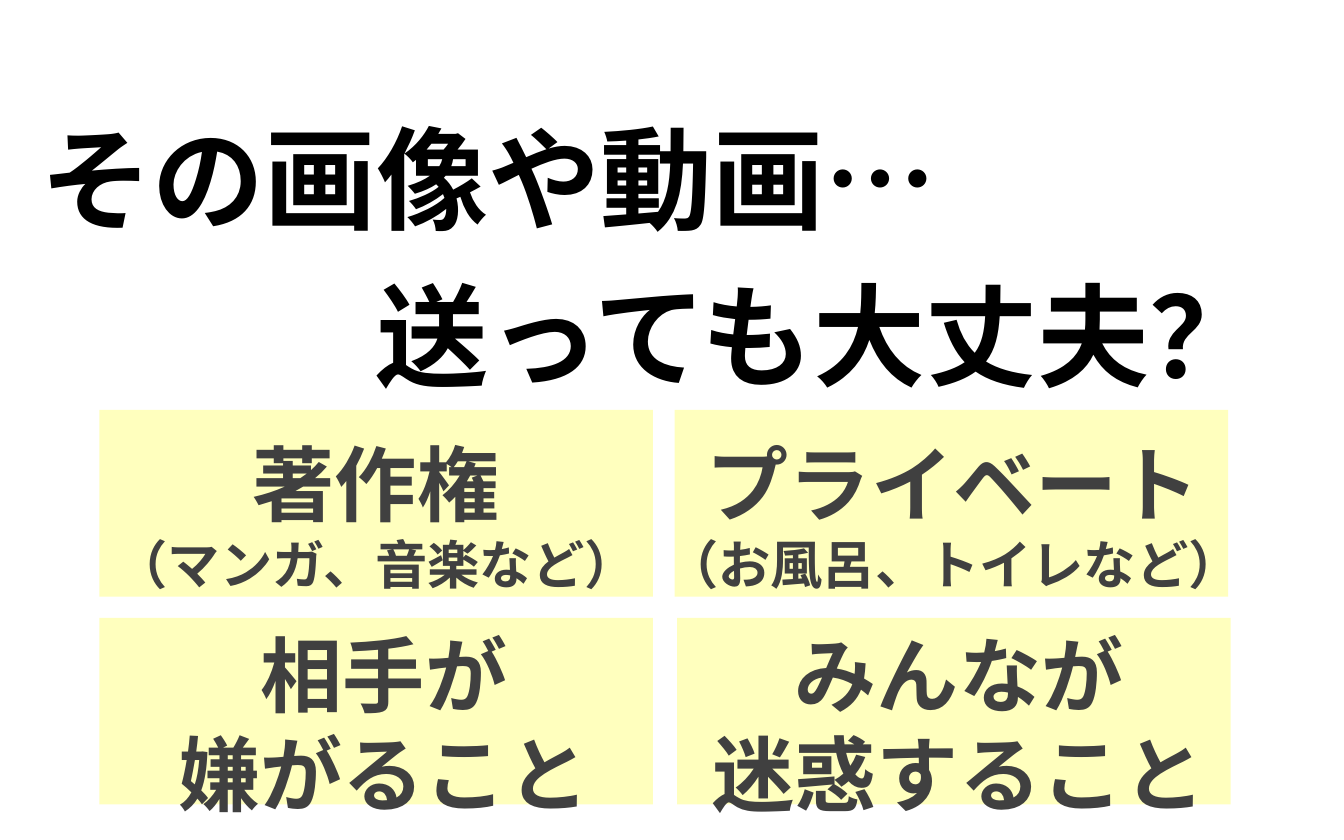
from pptx import Presentation
from pptx.dml.color import RGBColor
from pptx.enum import shapes, text
from pptx.oxml.ns import qn
from pptx.util import Cm, Pt
from lxml import etree

FONT = "Noto Sans CJK JP"
COLORS = {"title": "000000", "card": "FFFFBE", "card_text": "404040"}
TITLE_LINES = ["その画像や動画…", "送っても大丈夫？"]
TITLE_SIZE = 60
TITLE_LEADING = 84
CARD_LEADING = 1.21

# Card left and top, label left, top and width (cm), then lines with their sizes
CARD_WIDTH, CARD_HEIGHT = 10.46, 3.53
CARDS = [
    ((1.88, 7.75), (1.88, 8.05, 10.46), [("著作権", 44), ("（マンガ、音楽など）", 28)]),
    ((12.75, 7.75), (12.32, 8.05, 11.4), [("プライベート", 44), ("（お風呂、トイレなど）", 28)]),
    ((1.88, 11.68), (2.03, 11.66, 10.46), [("相手が", 44), ("嫌がること", 44)]),
    ((12.8, 11.68), (12.9, 11.66, 10.46), [("みんなが", 44), ("迷惑すること", 44)]),
]


def write_lines(frame, lines, color, alignment, leading):
    """Write (text, size) lines; leading is a multiple of the size, set exactly."""
    frame.word_wrap = True
    frame.auto_size = text.MSO_AUTO_SIZE.NONE
    frame.vertical_anchor = text.MSO_ANCHOR.TOP
    frame.text = "\n".join(line for line, _ in lines)
    for paragraph, (_, size) in zip(frame.paragraphs, lines):
        paragraph.alignment = alignment
        paragraph.line_spacing = Pt(round(size * leading, 1))
        paragraph.space_before = Pt(0)
        for run in paragraph.runs:
            font = run.font
            font.name = FONT
            font.size = Pt(size)
            font.bold = True
            font.color.rgb = RGBColor.from_string(COLORS[color])
            east_asian = etree.Element(qn("a:ea"), typeface=FONT)
            run._r.rPr.find(qn("a:latin")).addnext(east_asian)


def add_title(slide):
    title = slide.shapes.title
    title.left, title.top, title.width, title.height = Cm(0.51), Cm(1.52), Cm(24.41), Cm(6.25)
    write_lines(title.text_frame, [(line, TITLE_SIZE) for line in TITLE_LINES],
                "title", text.PP_ALIGN.LEFT, TITLE_LEADING / TITLE_SIZE)
    # The second line starts three characters in
    properties = title.text_frame.paragraphs[1]._p.get_or_add_pPr()
    properties.set("marL", str(Pt(3 * TITLE_SIZE)))
    properties.set("indent", "0")


def add_card(slide, position, label_box, lines):
    card = slide.shapes.add_shape(shapes.MSO_SHAPE.RECTANGLE, *map(Cm, position),
                                  Cm(CARD_WIDTH), Cm(CARD_HEIGHT))
    card.shadow.inherit = False
    card.fill.solid()
    card.fill.fore_color.rgb = RGBColor.from_string(COLORS["card"])
    card.line.fill.background()
    left, top, width = map(Cm, label_box)
    label = slide.shapes.add_textbox(left, top, width, Cm(CARD_HEIGHT))
    write_lines(label.text_frame, lines, "card_text", text.PP_ALIGN.CENTER, CARD_LEADING)


def main():
    presentation = Presentation()
    presentation.slide_width, presentation.slide_height = Cm(25.4), Cm(15.88)
    slide = presentation.slides.add_slide(presentation.slide_layouts[5])
    add_title(slide)
    for card in CARDS:
        add_card(slide, *card)
    presentation.save("out.pptx")


if __name__ == "__main__":
    main()
